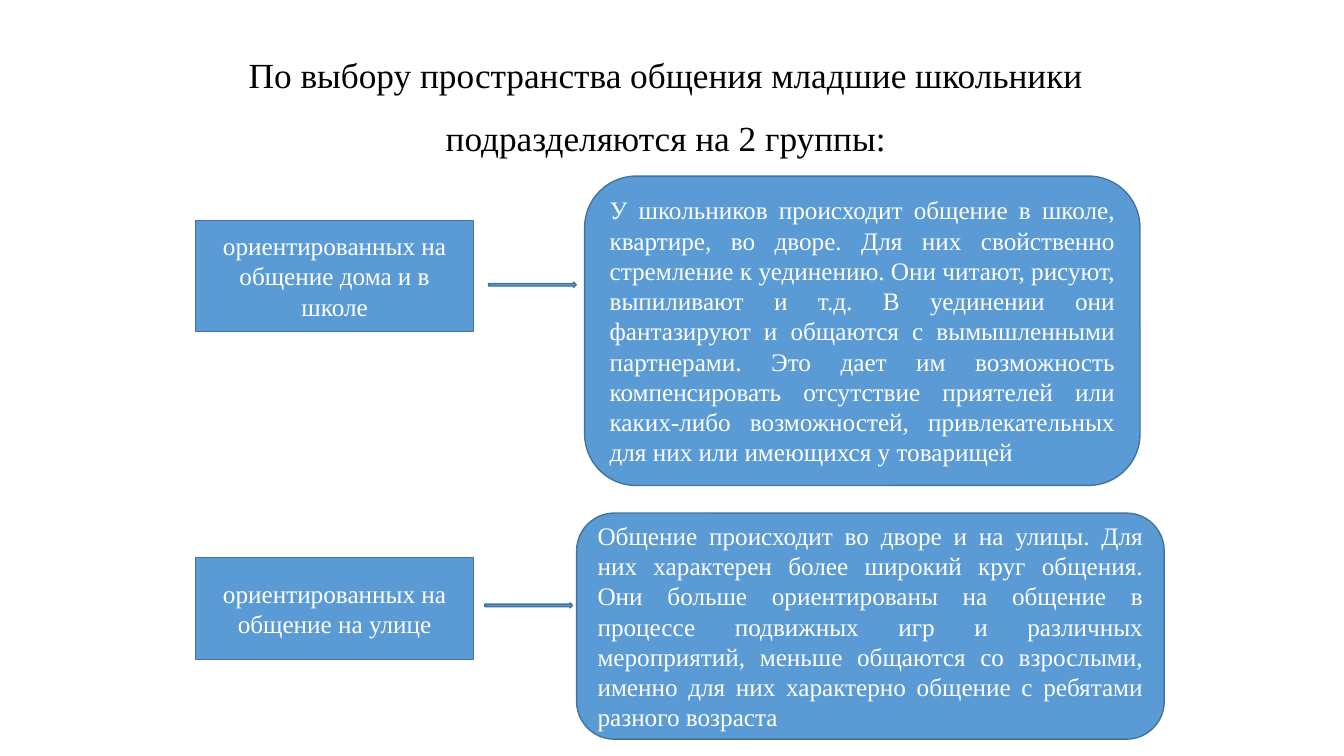
from dataclasses import dataclass
from pptx import Presentation
from pptx.dml.color import RGBColor
from pptx.enum.shapes import MSO_SHAPE
from pptx.enum.text import MSO_ANCHOR, PP_ALIGN
from pptx.util import Pt


@dataclass(frozen=True)
class Theme:
    """Colours and type sizes of the slide."""
    face: str = "Times New Roman"
    ink: RGBColor = RGBColor(0, 0, 0)
    light: RGBColor = RGBColor(255, 255, 255)
    fill: RGBColor = RGBColor(0x5B, 0x9B, 0xD5)
    edge: RGBColor = RGBColor(0x43, 0x73, 0x9E)
    title: float = 25.2
    body: float = 18


THEME = Theme()


@dataclass(frozen=True)
class Box:
    """A region in points."""
    left: float
    top: float
    width: float
    height: float

    def inner(self, left, top, width, height):
        """Return a box placed relative to this one."""
        return Box(self.left + left, self.top + top, width, height)

    def spots(self):
        """Return the four lengths for a new shape."""
        return [Pt(n) for n in (self.left, self.top, self.width, self.height)]


def write(shape, text, size, color, align):
    """Set one paragraph of text, centred in height."""
    frame = shape.text_frame
    frame.word_wrap = True
    frame.vertical_anchor = MSO_ANCHOR.MIDDLE
    para = frame.paragraphs[0]
    para.text = text
    para.alignment = align
    para.font.name = THEME.face
    para.font.size = Pt(size)
    para.font.color.rgb = color
    return para


def block(slide, kind, box):
    """Add a filled and outlined shape."""
    shape = slide.shapes.add_shape(kind, *box.spots())
    shape.shadow.inherit = False
    shape.fill.solid()
    shape.fill.fore_color.rgb = THEME.fill
    shape.line.color.rgb = THEME.edge
    shape.line.width = Pt(1)
    return shape


def heading(slide, box, text):
    """Add the slide title."""
    shape = slide.shapes.add_textbox(*box.spots())
    para = write(shape, text, THEME.title, THEME.ink, PP_ALIGN.CENTER)
    para.line_spacing = 1.5


def group(slide, box, label, detail, tall, start, drop, split):
    """Add a label, an arrow and a rounded detail panel."""
    name = block(slide, MSO_SHAPE.RECTANGLE, box.inner(0, 31.7, 198.7, tall))
    write(name, label, THEME.body, THEME.light, PP_ALIGN.CENTER)
    block(slide, MSO_SHAPE.RIGHT_ARROW, box.inner(start, drop, 62.6, 3.6))
    area = box.inner(split, 0, box.width - split, box.height)
    panel = block(slide, MSO_SHAPE.ROUNDED_RECTANGLE, area)
    write(panel, detail, THEME.body, THEME.light, PP_ALIGN.JUSTIFY)


def main():
    """Build and save the slide."""
    deck = Presentation()
    deck.slide_width, deck.slide_height = Pt(960), Pt(540)
    slide = deck.slides.add_slide(deck.slide_layouts[6])
    heading(slide, Box(135.4, 28, 680.4, 80),
            "По выбору пространства общения младшие школьники "
            "подразделяются на 2 группы:")
    group(slide, Box(139.7, 125.8, 674.6, 221),
          "ориентированных на общение дома и в школе",
          "У школьников происходит общение в школе, квартире, во дворе. "
          "Для них свойственно стремление к уединению. Они читают, рисуют, "
          "выпиливают и т.д. В уединении они фантазируют и общаются с "
          "вымышленными партнерами. Это дает им возможность компенсировать "
          "отсутствие приятелей или каких-либо возможностей, "
          "привлекательных для них или имеющихся у товарищей",
          tall=79.2, start=209.3, drop=75.8, split=277.9)
    group(slide, Box(139.7, 366.5, 691.9, 161.5),
          "ориентированных на общение на улице",
          "Общение происходит во дворе и на улицы. Для них характерен более "
          "широкий круг общения. Они больше ориентированы на общение в "
          "процессе подвижных игр и различных мероприятий, меньше общаются "
          "со взрослыми, именно для них характерно общение с ребятами "
          "разного возраста",
          tall=72.9, start=206.7, drop=64.1, split=272.2)
    deck.save("out.pptx")


if __name__ == "__main__":
    main()
